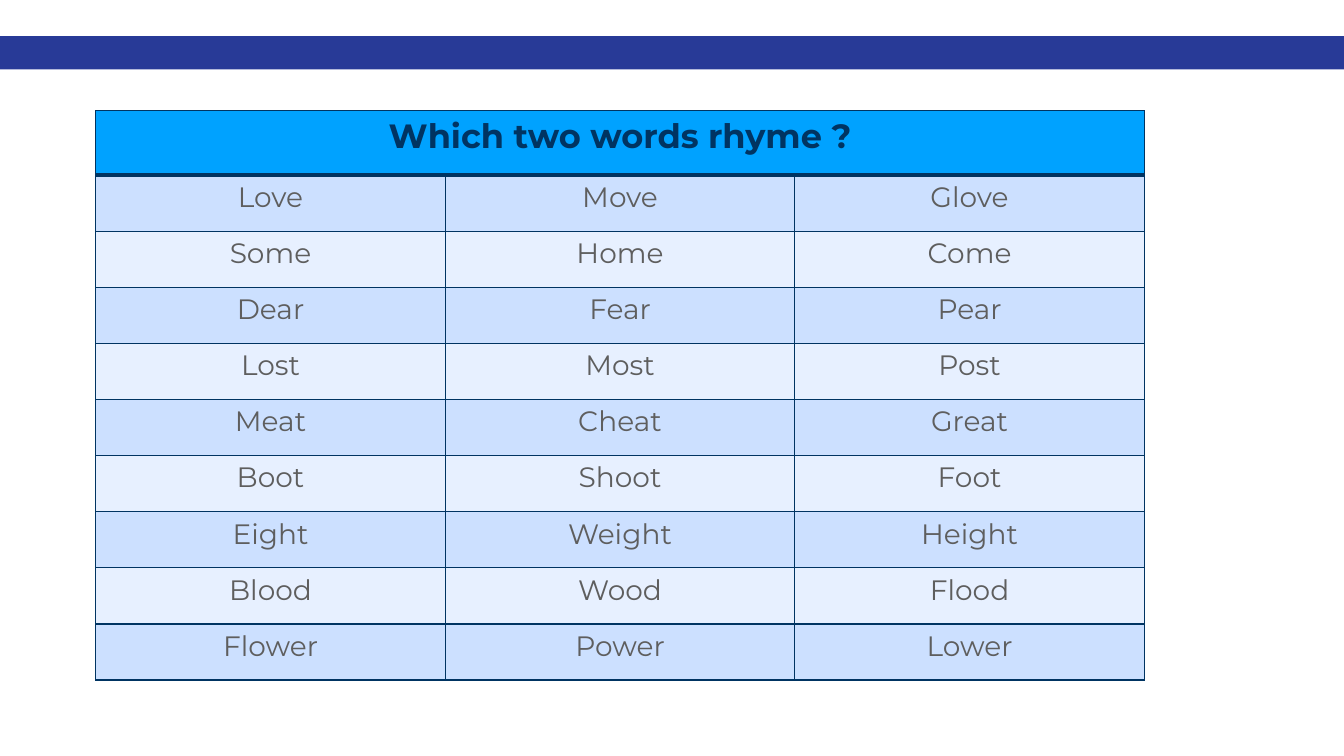
import pptx
import pptx.dml.color
import pptx.enum.shapes
import pptx.enum.text
import pptx.oxml.ns
import pptx.util
from lxml import etree

RGBColor = pptx.dml.color.RGBColor
Inches = pptx.util.Inches
Pt = pptx.util.Pt

WIDTH, HEIGHT = 13.33, 7.5
FONT = "Montserrat"
BAND_BLUE = RGBColor(0x28, 0x3A, 0x97)
NAVY = RGBColor(0x00, 0x34, 0x62)
HEADER_BLUE = RGBColor(0x00, 0xA2, 0xFF)
GREY = RGBColor(0x5E, 0x5E, 0x5E)
ROW_TINTS = (RGBColor(0xCC, 0xE0, 0xFF), RGBColor(0xE7, 0xF0, 0xFF))

TITLE = "Which two words rhyme ?"
WORDS = [
    ("Love", "Move", "Glove"),
    ("Some", "Home", "Come"),
    ("Dear", "Fear", "Pear"),
    ("Lost", "Most", "Post"),
    ("Meat", "Cheat", "Great"),
    ("Boot", "Shoot", "Foot"),
    ("Eight", "Weight", "Height"),
    ("Blood", "Wood", "Flood"),
    ("Flower", "Power", "Lower"),
]
HEADER_SHARE = 0.64 / 5.68  # header height as a share of the table
THIN, THICK = 1, 3


def write_text(frame, text, size, color, bold=False):
    para = frame.paragraphs[0]
    para.alignment = pptx.enum.text.PP_ALIGN.CENTER
    span = para.add_run()
    span.text = text
    span.font.name = FONT
    span.font.size = Pt(size)
    span.font.bold = bold
    span.font.color.rgb = color


def style_cell(cell, tint, top=THIN, bottom=THIN):
    # Borders come before the fill in the cell properties
    properties = cell._tc.get_or_add_tcPr()
    qn = pptx.oxml.ns.qn
    for side, points in (("L", THIN), ("R", THIN), ("T", top), ("B", bottom)):
        line = etree.SubElement(properties, qn(f"a:ln{side}"), w=str(Pt(points)))
        solid = etree.SubElement(line, qn("a:solidFill"))
        etree.SubElement(solid, qn("a:srgbClr"), val=str(NAVY))
    cell.fill.solid()
    cell.fill.fore_color.rgb = tint


def add_band(page, left, top, width, height):
    band = page.shapes.add_shape(
        pptx.enum.shapes.MSO_SHAPE.RECTANGLE,
        Inches(left), Inches(top), Inches(width), Inches(height))
    band.shadow.inherit = False
    band.fill.solid()
    band.fill.fore_color.rgb = BAND_BLUE
    band.line.fill.background()


def add_rhyme_table(page, left, top, width, height):
    columns = len(WORDS[0])
    table = page.shapes.add_table(
        len(WORDS) + 1, columns,
        Inches(left), Inches(top), Inches(width), Inches(height)).table
    header_height = height * HEADER_SHARE
    word_height = (height - header_height) / len(WORDS)
    for column in table.columns:
        column.width = Inches(width / columns)
    for number, row in enumerate(table.rows):
        row.height = Inches(word_height if number else header_height)

    # Title row across all columns
    for column in range(columns):
        style_cell(table.cell(0, column), HEADER_BLUE, bottom=THICK)
    title_cell = table.cell(0, 0)
    title_cell.merge(table.cell(0, columns - 1))
    write_text(title_cell.text_frame, TITLE, size=24, color=NAVY, bold=True)

    # Word rows in alternating tints
    for number, words in enumerate(WORDS):
        for column, word in enumerate(words):
            cell = table.cell(number + 1, column)
            style_cell(cell, ROW_TINTS[number % 2], top=THIN if number else THICK)
            write_text(cell.text_frame, word, size=20, color=GREY)


def main():
    deck = pptx.Presentation()
    deck.slide_width, deck.slide_height = Inches(WIDTH), Inches(HEIGHT)
    page = deck.slides.add_slide(deck.slide_layouts[6])
    add_band(page, 0, 0.36, WIDTH, 0.33)
    add_rhyme_table(page, 0.95, 1.1, 10.4, 5.65)
    deck.save("out.pptx")


if __name__ == "__main__":
    main()
